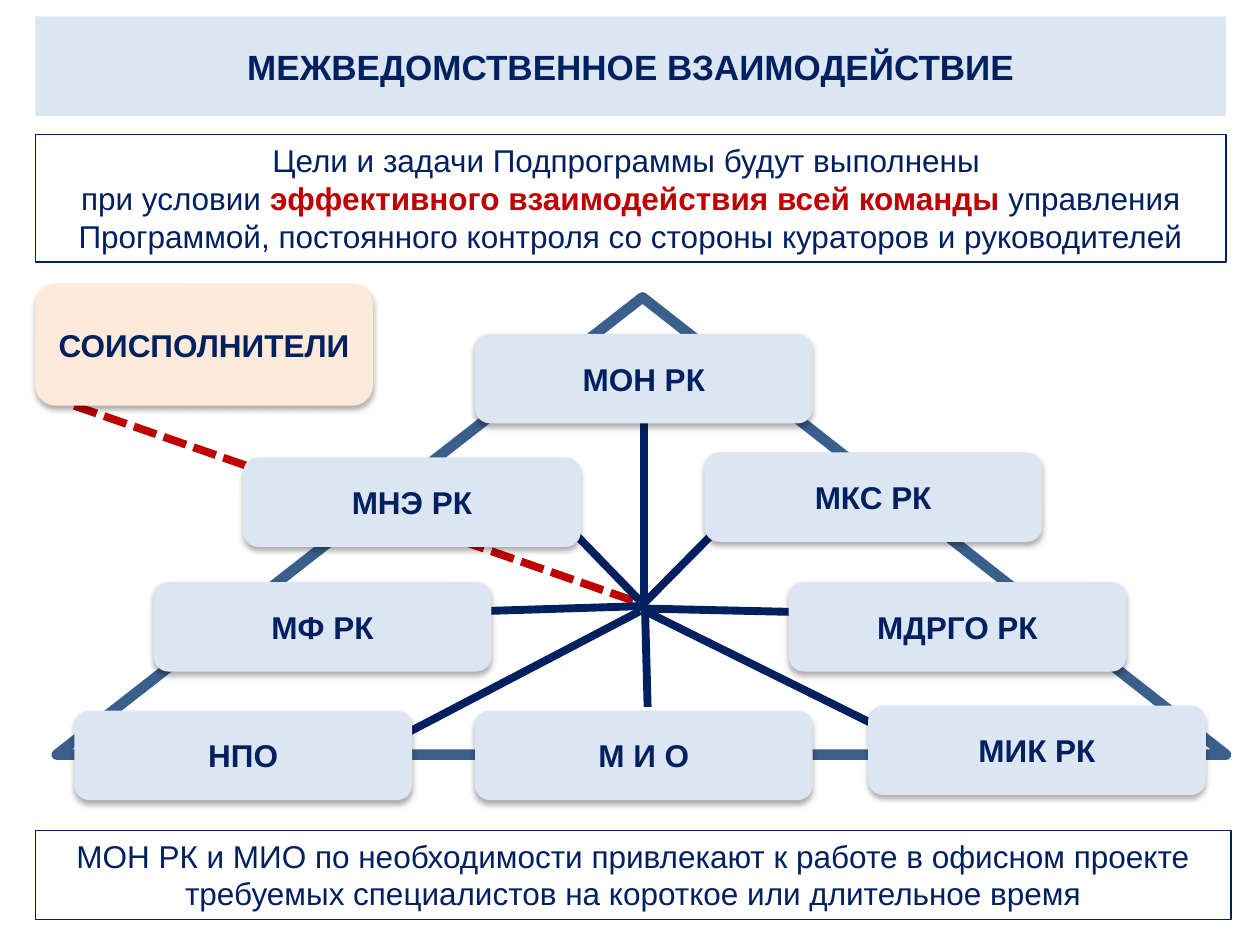
from lxml.etree import SubElement
from pptx import Presentation
from pptx.dml.color import RGBColor
from pptx.enum.dml import MSO_LINE
from pptx.enum.shapes import MSO_CONNECTOR, MSO_SHAPE
from pptx.enum.text import MSO_ANCHOR, MSO_AUTO_SIZE, PP_ALIGN
from pptx.oxml.ns import qn
from pptx.util import Inches, Pt

COLORS = {"navy": "002060", "red": "C00000", "pale": "DCE6F2", "peach": "FDEADA",
          "steel": "3A5F8C", "white": "FFFFFF", "black": "000000"}
FONT = "Arial"

# Content: paragraphs are lists of (text, highlighted) runs
TITLE = [[("МЕЖВЕДОМСТВЕННОЕ ВЗАИМОДЕЙСТВИЕ", False)]]
GOALS = [
    [("Цели и задачи Подпрограммы будут выполнены ", False)],
    [("при условии ", False),
     ("эффективного взаимодействия всей команды ", True),
     ("управления Программой, постоянного контроля со стороны кураторов и руководителей", False)],
]
SPECIALISTS = [[("МОН РК и МИО по необходимости привлекают к работе в офисном проекте "
                 "требуемых специалистов на короткое или длительное время", False)]]
LEAD = "МОН РК"
AGENCY_SIZE = (2.68, 0.71)
AGENCIES = {  # name: left, top
    LEAD: (3.77, 2.65),
    "МКС РК": (5.59, 3.59),
    "МДРГО РК": (6.26, 4.62),
    "МИК РК": (6.89, 5.6),
    "М И О": (3.77, 5.64),
    "НПО": (0.59, 5.64),
    "МФ РК": (1.22, 4.62),
    "МНЭ РК": (1.93, 3.63),
}
LEAD_SPOKE = ((5.11, 3.36), (5.11, 4.85))
SPOKES = [  # agency end, hub end
    ((5.94, 3.95), (5.11, 4.79)),
    ((6.44, 4.86), (5.12, 4.83)),
    ((7.2, 5.88), (5.12, 4.85)),
    ((5.14, 5.61), (5.12, 4.85)),
    ((3.11, 5.88), (5.08, 4.85)),
    ((3.83, 4.85), (5.11, 4.81)),
    ((4.47, 4.14), (5.08, 4.77)),
]
PARTNER_SPOKE = ((0.59, 3.22), (5.09, 4.79))


def color(name):
    return RGBColor.from_string(COLORS[name])


def write(shape, paragraphs, size, bold=False):
    frame = shape.text_frame
    frame.word_wrap = True
    for i, runs in enumerate(paragraphs):
        paragraph = frame.paragraphs[0] if i == 0 else frame.add_paragraph()
        paragraph.alignment = PP_ALIGN.CENTER
        for text, highlighted in runs:
            run = paragraph.add_run()
            run.text = text
            run.font.name = FONT
            run.font.size = Pt(size)
            run.font.bold = bold or highlighted
            run.font.color.rgb = color("red" if highlighted else "navy")


def add_block(kind, box, fill):
    shape = slide.shapes.add_shape(kind, *map(Inches, box))
    shape.shadow.inherit = False
    shape.fill.solid()
    shape.fill.fore_color.rgb = color(fill)
    shape.line.fill.background()
    shape.text_frame.vertical_anchor = MSO_ANCHOR.MIDDLE
    return shape


def add_card(name, box, fill):
    card = add_block(MSO_SHAPE.ROUNDED_RECTANGLE, box, fill)
    write(card, [[(name, False)]], 18, bold=True)
    effects = card._element.spPr.find(qn("a:effectLst"))
    shadow = SubElement(effects, qn("a:outerShdw"), blurRad=str(Pt(3.5)),
                        dist=str(Pt(2.2)), dir="5400000", rotWithShape="0")
    tint = SubElement(shadow, qn("a:srgbClr"), val=COLORS["black"])
    SubElement(tint, qn("a:alpha"), val="32000")
    return card


def add_note(paragraphs, box):
    note = slide.shapes.add_textbox(*map(Inches, box))
    note.line.color.rgb = color("navy")
    note.line.width = Pt(0.75)
    write(note, paragraphs, 18)
    note.text_frame.auto_size = MSO_AUTO_SIZE.SHAPE_TO_FIT_TEXT


def add_spoke(ends, line_color):
    start, end = ends
    spoke = slide.shapes.add_connector(MSO_CONNECTOR.STRAIGHT, *map(Inches, start + end))
    spoke.line.color.rgb = color(line_color)
    spoke.line.width = Pt(4.5)
    SubElement(spoke._element.spPr, qn("a:effectLst"))
    return spoke


presentation = Presentation()
presentation.slide_width, presentation.slide_height = Inches(10), Inches(7.5)
slide = presentation.slides.add_slide(presentation.slide_layouts[6])

# Triangle behind the agencies
triangle = add_block(MSO_SHAPE.ISOSCELES_TRIANGLE, (0.45, 2.36, 9.28, 3.63), "white")
triangle.adjustments[0] = 0.501
triangle.line.color.rgb = color("steel")
triangle.line.width = Pt(6)

# Title and framed notes
title = add_block(MSO_SHAPE.RECTANGLE, (0.28, 0.13, 9.45, 0.79), "pale")
write(title, TITLE, 20, bold=True)
add_note(GOALS, (0.28, 1.07, 9.45, 1.01))
add_note(SPECIALISTS, (0.28, 6.59, 9.49, 0.71))

# Spokes to the hub
partner_spoke = add_spoke(PARTNER_SPOKE, "red")
partner_spoke.line.dash_style = MSO_LINE.SQUARE_DOT
lead_spoke = add_spoke(LEAD_SPOKE, "navy")
for ends in SPOKES:
    add_spoke(ends, "navy")

# Agencies and partners
agency_cards = {name: add_card(name, place + AGENCY_SIZE, "pale")
                for name, place in AGENCIES.items()}
lead_spoke.begin_connect(agency_cards[LEAD], 2)
add_card("СОИСПОЛНИТЕЛИ", (0.28, 2.25, 2.68, 0.97), "peach")

presentation.save("out.pptx")
